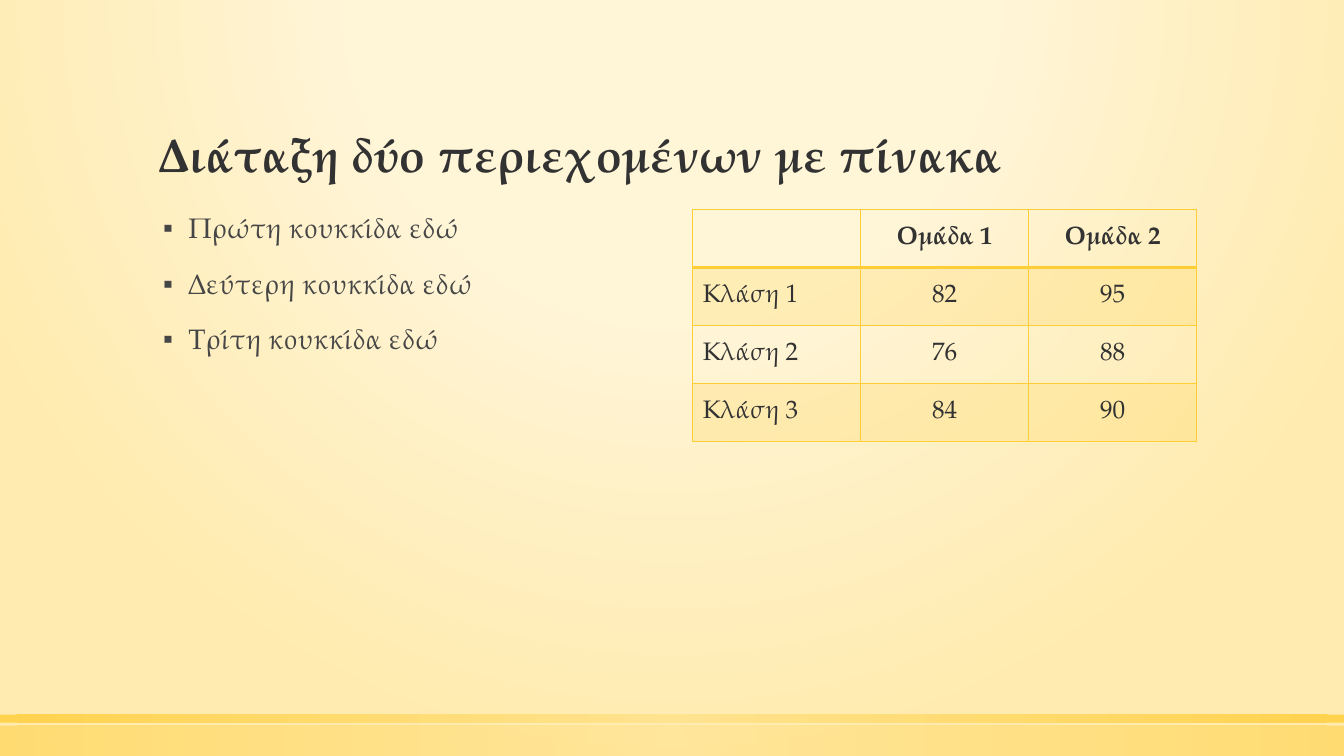
"""Builds a slide with a title, three bullets and a table of group scores."""
from lxml.etree import SubElement
from pptx import Presentation
from pptx.dml.color import RGBColor
from pptx.enum.shapes import MSO_SHAPE
from pptx.enum.text import MSO_ANCHOR, PP_ALIGN
from pptx.oxml import parse_xml
from pptx.oxml.ns import nsdecls, qn
from pptx.util import Inches, Pt

COLORS = {
    "title": "323232",
    "body": "464646",
    "gold": "FFCD36",
    "light_gold": "FFE186",
    "cream": "FFF5D7",
    "sand": "FFEBAF",
}
FONT = "TeX Gyre Pagella"


def write(paragraph, text, size=18, color="title", bold=False, align=PP_ALIGN.LEFT, line_spacing=1.0):
    paragraph.alignment = align
    paragraph.line_spacing = line_spacing
    run = paragraph.add_run()
    run.text = text
    run.font.name = FONT
    run.font.size = Pt(size)
    run.font.bold = bold
    run.font.color.rgb = RGBColor.from_string(COLORS[color])


def paint_radial(properties, stops, top=50, bottom=50):
    stop_xml = "".join(
        f'<a:gs pos="{position * 1000}"><a:srgbClr val="{COLORS[color]}">'
        f'<a:alpha val="{alpha * 1000}"/></a:srgbClr></a:gs>'
        for position, color, alpha in stops
    )
    gradient = parse_xml(
        f'<a:gradFill {nsdecls("a")} rotWithShape="1"><a:gsLst>{stop_xml}</a:gsLst>'
        f'<a:path path="circle"><a:fillToRect l="50000" t="{top * 1000}" '
        f'r="50000" b="{bottom * 1000}"/></a:path></a:gradFill>'
    )
    properties.replace(properties.find(qn("a:solidFill")), gradient)


prs = Presentation()
prs.slide_width = Inches(13.33)
prs.slide_height = Inches(7.5)
slide = prs.slides.add_slide(prs.slide_layouts[6])

slide.background.fill.solid()
backdrop = slide.element.find(".//" + qn("p:bgPr"))
paint_radial(backdrop, [(0, "cream", 59), (40, "cream", 66), (100, "sand", 100)], top=-80, bottom=180)

for band_top, band_height, opacity in [(7.2, 0.3, 50), (7.09, 0.08, 80)]:
    band = slide.shapes.add_shape(
        MSO_SHAPE.RECTANGLE, 0, Inches(band_top), prs.slide_width, Inches(band_height)
    )
    band.shadow.inherit = False
    band.line.fill.background()
    band.fill.solid()
    paint_radial(band.element.spPr, [(0, "light_gold", opacity), (100, "gold", opacity)])

title = slide.shapes.add_textbox(Inches(1.47), Inches(0.51), Inches(10.4), Inches(1.35)).text_frame
title.word_wrap = True
title.vertical_anchor = MSO_ANCHOR.BOTTOM
write(title.paragraphs[0], "Διάταξη δύο περιεχομένων με πίνακα", size=34, bold=True, line_spacing=0.9)

bullets = slide.shapes.add_textbox(Inches(1.47), Inches(2.08), Inches(5), Inches(4.51)).text_frame
bullets.word_wrap = True
for index, ordinal in enumerate(["Πρώτη", "Δεύτερη", "Τρίτη"]):
    bullet = bullets.add_paragraph() if index else bullets.paragraphs[0]
    write(bullet, f"{ordinal} κουκκίδα εδώ", size=20, color="body", line_spacing=0.9)
    bullet.space_before = Pt(18)
    bullet_format = bullet._p.get_or_add_pPr()
    bullet_format.set("marL", str(Inches(0.3)))
    bullet_format.set("indent", str(Inches(-0.25)))
    SubElement(bullet_format, qn("a:buFont")).set("typeface", "Arial")
    SubElement(bullet_format, qn("a:buChar")).set("char", "▪")

scores = [
    ["", "Ομάδα 1", "Ομάδα 2"],
    ["Κλάση 1", "82", "95"],
    ["Κλάση 2", "76", "88"],
    ["Κλάση 3", "84", "90"],
]
score_table = slide.shapes.add_table(
    len(scores), len(scores[0]), Inches(6.87), Inches(2.08), Inches(5), Inches(2.3)
).table
for row, values in enumerate(scores):
    for column, value in enumerate(values):
        cell = score_table.cell(row, column)
        cell.vertical_anchor = MSO_ANCHOR.MIDDLE
        if value:
            align = PP_ALIGN.CENTER if column else PP_ALIGN.LEFT
            write(cell.text_frame.paragraphs[0], value, bold=row == 0, align=align)

        cell_format = cell._tc.get_or_add_tcPr()
        for side in ["L", "R", "T", "B"]:
            under_header = (row, side) in [(0, "B"), (1, "T")]
            border = SubElement(cell_format, qn(f"a:ln{side}"))
            border.set("w", str(Pt(2 if under_header else 1)))
            border_fill = SubElement(border, qn("a:solidFill"))
            SubElement(border_fill, qn("a:srgbClr")).set("val", COLORS["gold"])

        if row % 2:
            cell.fill.solid()
            cell.fill.fore_color.rgb = RGBColor.from_string(COLORS["gold"])
            tint = cell_format.find(qn("a:solidFill")).find(qn("a:srgbClr"))
            SubElement(tint, qn("a:alpha")).set("val", "20000")
        else:
            cell.fill.background()

prs.save("out.pptx")
